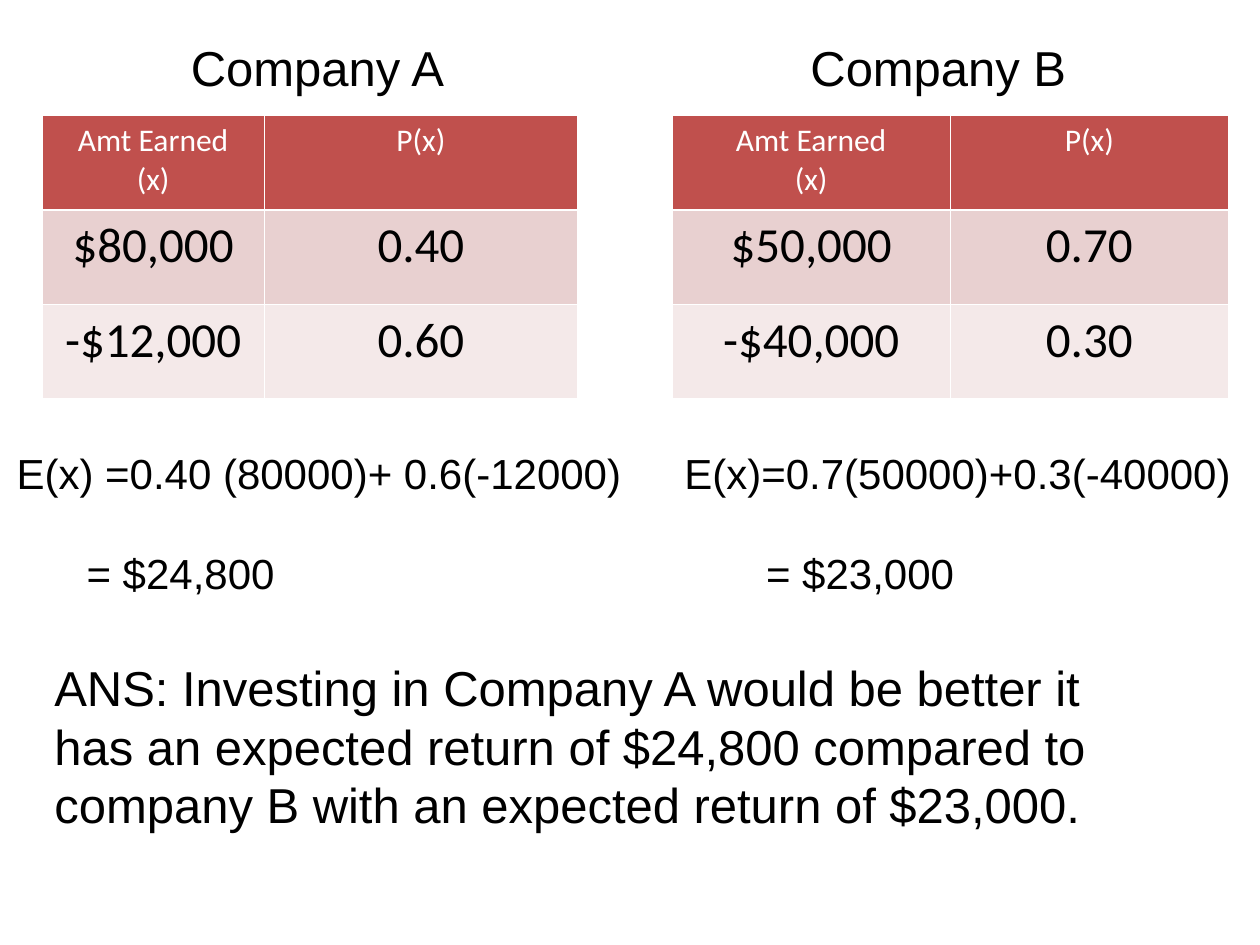
from dataclasses import dataclass

from pptx import Presentation
from pptx.dml.color import RGBColor
from pptx.enum.text import MSO_AUTO_SIZE, PP_ALIGN
from pptx.util import Pt

CENTER = PP_ALIGN.CENTER
FIT_SHAPE = MSO_AUTO_SIZE.SHAPE_TO_FIT_TEXT
COLORS = {
    "text": "000000",
    "header_text": "FFFFFF",
    "header": "C0504D",
    "band_dark": "E8D0D0",
    "band_light": "F4E9E9",
}
ROW_FILLS = ("header", "band_dark", "band_light")
BODY_FONT, TABLE_FONT = "Arial", "Calibri"
ROW_HEIGHT = 54
TABLE_TOP = 66
HEADER = ("Amt Earned\n(x)", "P(x)")


@dataclass(frozen=True)
class Area:
    left: float
    top: float
    width: float
    height: float


@dataclass(frozen=True)
class Company:
    name: str
    name_area: Area
    table_left: float
    column_widths: tuple[float, float]
    outcomes: tuple[tuple[str, str], ...]
    expectation: str
    result: str
    result_indent: float
    working_area: Area


COMPANIES = (
    Company(
        "Company A", Area(102, 18, 192, 41), 24, (127, 179),
        (("$80,000", "0.40"), ("-$12,000", "0.60")),
        "E(x) =0.40 (80000)+ 0.6(-12000)", "= $24,800", 40,
        Area(2.4, 252, 360, 94.5),
    ),
    Company(
        "Company B", Area(456, 18, 162, 41), 384, (159, 159),
        (("$50,000", "0.70"), ("-$40,000", "0.30")),
        "E(x)=0.7(50000)+0.3(-40000)", "= $23,000", 46.7,
        Area(384, 252, 330, 94.5),
    ),
)
ANSWER = (
    "ANS: Investing in Company A would be better it has an expected return "
    "of $24,800 compared to company B with an expected return of $23,000."
)


def add_span(para, text: str, size: float, font: str = BODY_FONT, color: str = "text") -> None:
    span = para.add_run()
    span.text = text
    span.font.size = Pt(size)
    span.font.name = font
    span.font.bold = False
    span.font.color.rgb = RGBColor.from_string(COLORS[color])


def add_text(slide, area: Area, text: str, size: float):
    box = slide.shapes.add_textbox(
        Pt(area.left), Pt(area.top), Pt(area.width), Pt(area.height)
    )
    frame = box.text_frame
    frame.word_wrap = True
    frame.auto_size = FIT_SHAPE
    add_span(frame.paragraphs[0], text, size)
    return frame


def add_working(slide, company: Company) -> None:
    """Add the expected value sum with its indented result below."""
    frame = add_text(slide, company.working_area, company.expectation, 24)
    para = frame.add_paragraph()
    para.space_before = Pt(28.8)
    properties = para._p.get_or_add_pPr()
    properties.set("marL", str(Pt(company.result_indent)))
    properties.set("indent", "0")
    add_span(para, company.result, 24)


def fill_cell(cell, text: str, fill: str) -> None:
    cell.fill.solid()
    cell.fill.fore_color.rgb = RGBColor.from_string(COLORS[fill])
    is_header = fill == "header"
    size, color = (18, "header_text") if is_header else (28, "text")
    frame = cell.text_frame
    for index, line in enumerate(text.split("\n")):
        para = frame.add_paragraph() if index else frame.paragraphs[0]
        para.alignment = CENTER
        add_span(para, line, size, TABLE_FONT, color)


def add_distribution(slide, company: Company) -> None:
    rows = (HEADER, *company.outcomes)
    table = slide.shapes.add_table(
        len(rows), len(HEADER), Pt(company.table_left), Pt(TABLE_TOP),
        Pt(sum(company.column_widths)), Pt(ROW_HEIGHT * len(rows)),
    ).table
    for column, width in zip(table.columns, company.column_widths):
        column.width = Pt(width)
    for row, texts, fill in zip(table.rows, rows, ROW_FILLS):
        row.height = Pt(ROW_HEIGHT)
        for cell, text in zip(row.cells, texts):
            fill_cell(cell, text, fill)


def main() -> None:
    deck = Presentation()
    deck.slide_width, deck.slide_height = Pt(720), Pt(540)
    slide = deck.slides.add_slide(deck.slide_layouts.get_by_name("Blank"))
    for company in COMPANIES:
        add_text(slide, company.name_area, company.name, 28)
        add_distribution(slide, company)
        add_working(slide, company)
    add_text(slide, Area(24, 372, 648, 109), ANSWER, 28)
    deck.save("out.pptx")


if __name__ == "__main__":
    main()
